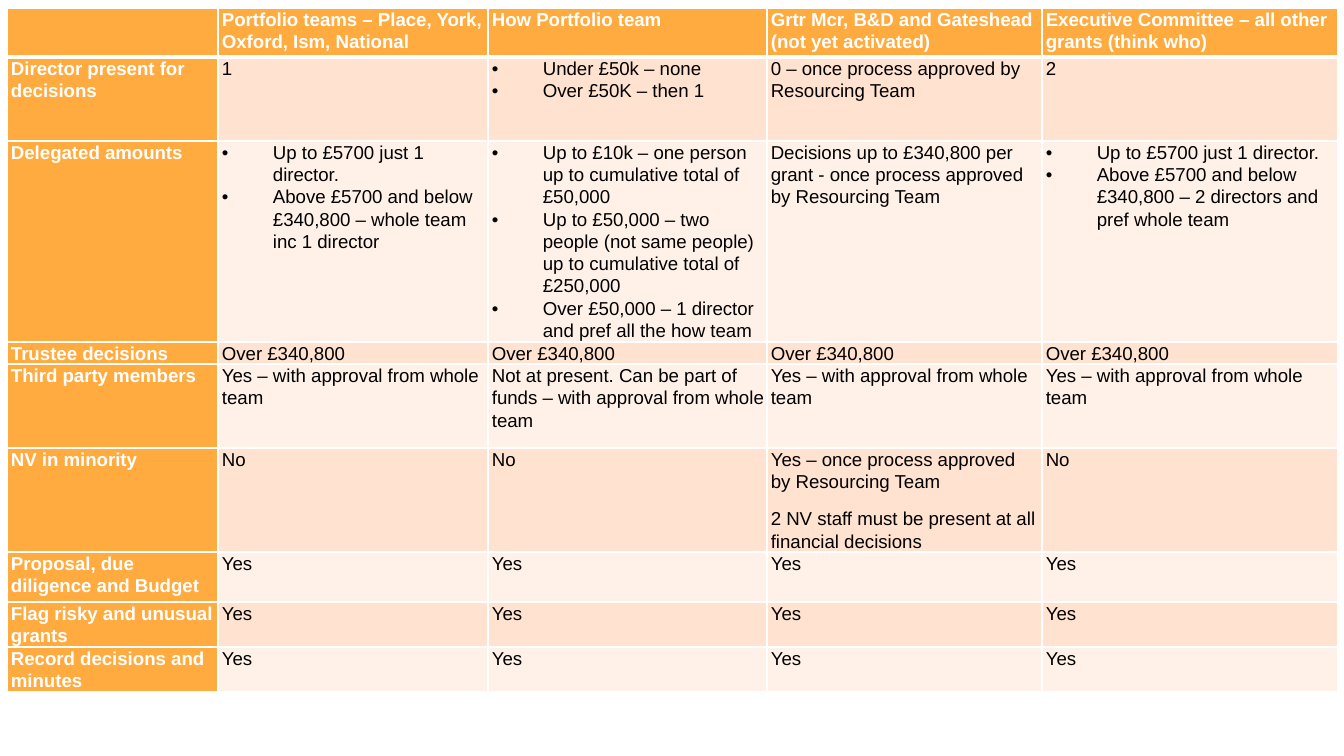
import pptx
import pptx.util
import pptx.dml.color
import pptx.oxml
import pptx.oxml.ns

SCALE = 914400 / 134.4  # EMU in one px
COLORS = {
    "heading": "FFAB40",
    "band_dark": "FFE2CF",
    "band_light": "FFF1E8",
    "white": "FFFFFF",
    "black": "000000",
}

COLUMN_WIDTHS = [211, 270, 279, 275, 296]
ROW_HEIGHTS = [49, 84, 201, 22, 84, 104, 50, 44, 44]

# A tuple is a bulleted list; a newline starts a new paragraph
APPROVAL = "Yes – with approval from whole team"
ROWS = [
    ["", "Portfolio teams – Place, York, Oxford, Ism, National", "How Portfolio team",
     "Grtr Mcr, B&D and Gateshead (not yet activated)",
     "Executive Committee – all other grants (think who)"],
    ["Director present for decisions", "1",
     ("Under £50k – none", "Over £50K – then 1"),
     "0 – once process approved by Resourcing Team", "2"],
    ["Delegated amounts",
     ("Up to £5700 just 1 director.",
      "Above £5700 and below £340,800 – whole team inc 1 director"),
     ("Up to £10k – one person up to cumulative total of £50,000",
      "Up to £50,000 – two people (not same people) up to cumulative total of £250,000",
      "Over £50,000 – 1 director and pref all the how team"),
     "Decisions up to £340,800 per grant - once process approved by Resourcing Team",
     ("Up to £5700 just 1 director.",
      "Above £5700 and below £340,800 – 2 directors and pref whole team")],
    ["Trustee decisions"] + ["Over £340,800"] * 4,
    ["Third party members", APPROVAL,
     "Not at present. Can be part of funds – with approval from whole team",
     APPROVAL, APPROVAL],
    ["NV in minority", "No", "No",
     "Yes – once process approved by Resourcing Team\n"
     "2 NV staff must be present at all financial decisions", "No"],
    ["Proposal, due diligence and Budget"] + ["Yes"] * 4,
    ["Flag risky and unusual grants"] + ["Yes"] * 4,
    ["Record decisions and minutes"] + ["Yes"] * 4,
]


def px(length):
    return pptx.util.Emu(round(length * SCALE))


def color(name):
    return pptx.dml.color.RGBColor.from_string(COLORS[name])


class SlideBuilder:
    font_name = "Arial"
    font_size = 10
    line_spacing = 1.07
    space_after = 8
    left_margin = 4
    right_margin = 3
    bullet_indent = 51

    def __init__(self, page):
        self.page = page

    def table(self, left, top, widths, heights, rows):
        frame = self.page.shapes.add_table(
            len(heights), len(widths), px(left), px(top), px(sum(widths)), px(sum(heights)))
        table = frame.table
        table.first_row = table.horz_banding = False
        for column, width in zip(table.columns, widths):
            column.width = px(width)
        for row, height in zip(table.rows, heights):
            row.height = px(height)
        for row_index, row in enumerate(rows):
            for column_index, content in enumerate(row):
                self.cell(table.cell(row_index, column_index), content, row_index, column_index)

    def cell(self, cell, content, row_index, column_index):
        heading = row_index == 0 or column_index == 0
        band = "band_dark" if row_index % 2 else "band_light"
        cell.fill.solid()
        cell.fill.fore_color.rgb = color("heading" if heading else band)
        cell.margin_left = px(self.left_margin)
        cell.margin_right = px(self.right_margin)
        cell.margin_top = cell.margin_bottom = 0
        # The rule under the header row is thicker
        self.borders(cell, top=3 if row_index == 1 else 1, bottom=3 if row_index == 0 else 1)

        bulleted = isinstance(content, tuple)
        lines = content if bulleted else content.split("\n")
        for index, line in enumerate(lines):
            box = cell.text_frame
            para = box.add_paragraph() if index else box.paragraphs[0]
            self.paragraph(para, line, heading)
            if bulleted:
                self.bullet(para, last=index == len(lines) - 1)

    def paragraph(self, para, text, heading):
        para.text = text
        para.line_spacing = self.line_spacing
        para.space_after = pptx.util.Pt(self.space_after)
        para.font.name = self.font_name
        para.font.size = pptx.util.Pt(self.font_size)
        para.font.bold = heading
        para.font.color.rgb = color("white" if heading else "black")

    def bullet(self, para, last):
        if not last:
            para.space_after = pptx.util.Pt(0)
        properties = para._p.get_or_add_pPr()
        indent = px(self.bullet_indent)
        properties.set("marL", str(indent))
        properties.set("indent", str(-indent))
        namespace = pptx.oxml.ns.nsdecls("a")
        font_defaults = properties.find(pptx.oxml.ns.qn("a:defRPr"))
        for mark in (f'<a:buFont {namespace} typeface="{self.font_name}"/>',
                     f'<a:buChar {namespace} char="•"/>'):
            font_defaults.addprevious(pptx.oxml.parse_xml(mark))

    def borders(self, cell, top, bottom):
        properties = cell._tc.get_or_add_tcPr()
        sides = {"lnL": 1, "lnR": 1, "lnT": top, "lnB": bottom}
        for index, (side, points) in enumerate(sides.items()):
            line = pptx.oxml.parse_xml(
                f'<a:{side} {pptx.oxml.ns.nsdecls("a")} w="{pptx.util.Pt(points)}">'
                f'<a:solidFill><a:srgbClr val="{COLORS["white"]}"/></a:solidFill></a:{side}>')
            properties.insert(index, line)


def main():
    deck = pptx.Presentation()
    deck.slide_width, deck.slide_height = px(1344), px(756)
    page = deck.slides.add_slide(deck.slide_layouts[6])

    # Decision-making table
    SlideBuilder(page).table(7, 8, COLUMN_WIDTHS, ROW_HEIGHTS, ROWS)

    deck.save("out.pptx")


if __name__ == "__main__":
    main()
